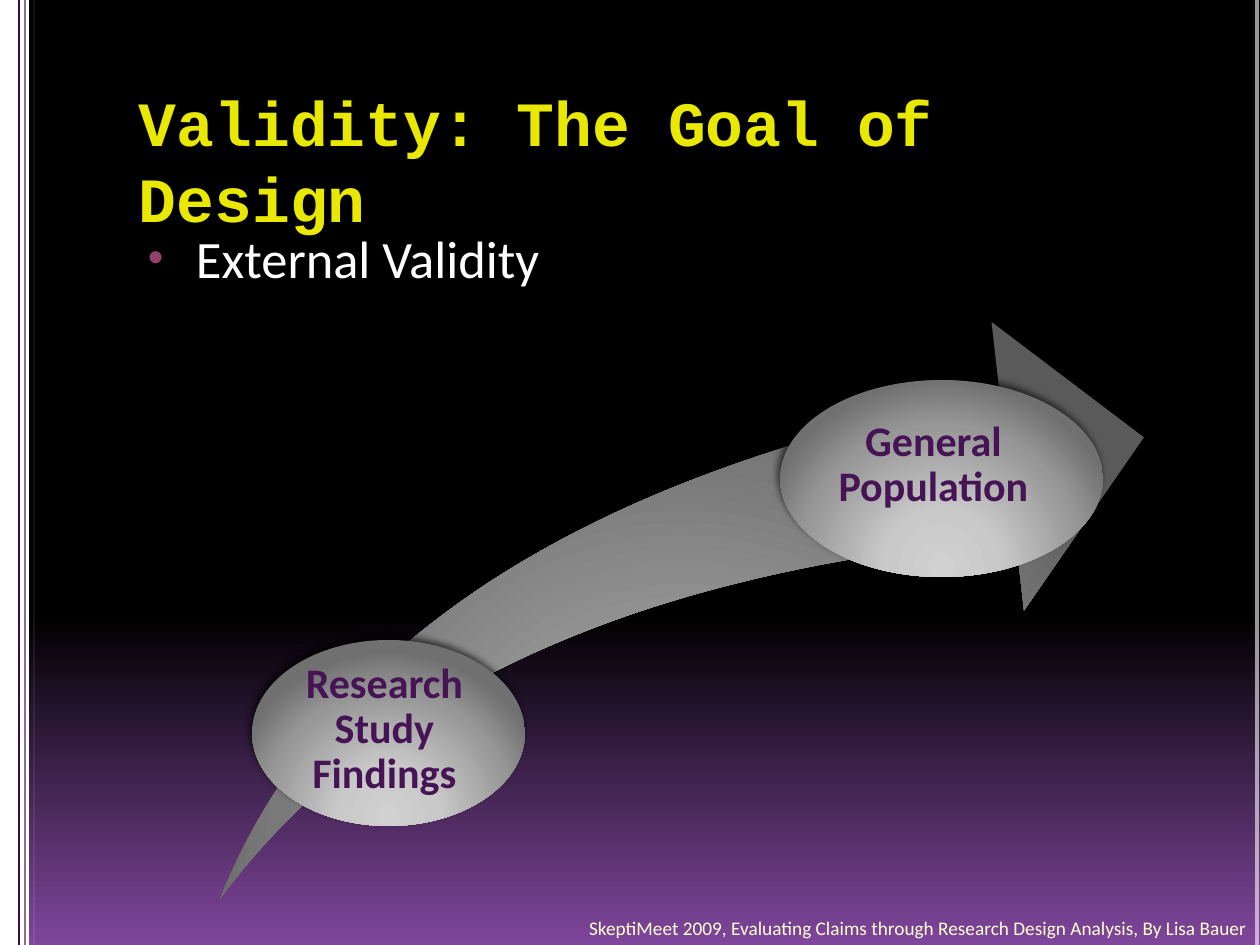
from lxml import etree
from pptx import Presentation
from pptx.dml.color import RGBColor
from pptx.enum.shapes import MSO_CONNECTOR, MSO_SHAPE
from pptx.enum.text import MSO_ANCHOR, PP_ALIGN
from pptx.oxml import parse_xml
from pptx.oxml.ns import nsdecls, qn
from pptx.util import Pt

PX = 914400 // 126
WIDTH, HEIGHT = 1260, 945
LEFT, CENTER, RIGHT = PP_ALIGN.LEFT, PP_ALIGN.CENTER, PP_ALIGN.RIGHT
TOP, BOTTOM = MSO_ANCHOR.TOP, MSO_ANCHOR.BOTTOM

COLORS = {
    "white": "FFFFFF", "plum": "340F40", "title": "E8E800",
    "label": "461455", "bullet": "92406E", "footer": "FFFFD2",
}
BACKDROP = [(0, "000000"), (65, "000000"), (100, "7F469C")]
ARROW_GRAYS = [(0, "A7A7A7"), (30, "A1A1A1"), (75, "797979"), (100, "5A5A5A")]
OVAL_GRAYS = [(0, "D1D1D1"), (30, "C9C9C9"), (75, "979797"), (100, "707070")]
LINEAR_DOWN = '<a:lin ang="5400000" scaled="0"/>'
GLOW_FROM_BELOW = ('<a:path path="circle"><a:fillToRect l="50000" t="100000" '
                   'r="50000" b="10000"/></a:path>')

# x, color, width in points, opacity in percent
STRIPES = [(19, "plum", 1, 100), (25, "plum", 1, 59),
           (34, "white", 0.25, 59), (1257, "white", 2.25, 59)]
SIDEBAR = (0, 0, 29, HEIGHT)
ARROW = (220, 322, 924, 577)

TITLE = ("Validity: The Goal of Design", (126, 70, 1071, 126))
POINT = ("External Validity", (126, 217, 1071, 659))
FOOTER = ("SkeptiMeet 2009, Evaluating Claims through Research Design Analysis, "
          "By Lisa Bauer", (494, 895, 766, 50))
# label, oval box, label box, left inset
STAGES = [
    ("Research Study Findings", (252, 640, 273, 186), (242, 662, 267, 127), 18),
    ("General Population", (780, 380, 323, 197), (766, 420, 306, 113), 29),
]


def emu(box):
    return [value * PX for value in box]


def rgb(name):
    return RGBColor.from_string(COLORS[name])


def set_gradient(fill, properties, stops, direction):
    """Put a gradient where the solid fill of the properties element stands."""
    fill.solid()
    stop_xml = "".join(
        f'<a:gs pos="{position * 1000}"><a:srgbClr val="{color}"/></a:gs>'
        for position, color in stops)
    gradient = parse_xml(f'<a:gradFill {nsdecls("a")} rotWithShape="1">'
                         f'<a:gsLst>{stop_xml}</a:gsLst>{direction}</a:gradFill>')
    properties.replace(properties.find(qn("a:solidFill")), gradient)


def add_plain_shape(slide, preset, box):
    shape = slide.shapes.add_shape(preset, *emu(box))
    shape.shadow.inherit = False
    shape.line.fill.background()
    return shape


def add_stripe(slide, x, color, width, opacity):
    stripe = slide.shapes.add_connector(
        MSO_CONNECTOR.STRAIGHT, *emu((x, 0, x, HEIGHT)))
    stripe.line.width = Pt(width)
    stripe.line.color.rgb = rgb(color)
    properties = stripe._element.spPr
    tint = next(properties.iter(qn("a:srgbClr")))
    etree.SubElement(tint, qn("a:alpha")).set("val", str(opacity * 1000))
    etree.SubElement(properties, qn("a:effectLst"))


def add_text(slide, text, box, size, color, font="Calibri", bold=False,
             align=LEFT, anchor=TOP, insets=(13, 6, 13, 6), spacing=None):
    frame = slide.shapes.add_textbox(*emu(box)).text_frame
    left, top, right, bottom = emu(insets)
    frame_format = {"word_wrap": True, "vertical_anchor": anchor,
                    "margin_left": left, "margin_top": top,
                    "margin_right": right, "margin_bottom": bottom}
    for name, value in frame_format.items():
        setattr(frame, name, value)
    paragraph = frame.paragraphs[0]
    paragraph.alignment = align
    paragraph.line_spacing = spacing
    run = paragraph.add_run()
    run.text = text
    for name, value in {"name": font, "size": Pt(size), "bold": bold}.items():
        setattr(run.font, name, value)
    run.font.color.rgb = rgb(color)
    return paragraph


def add_bullet(paragraph):
    properties = paragraph._p.get_or_add_pPr()
    properties.set("marL", str(57 * PX))
    properties.set("indent", str(-48 * PX))
    for markup in (f'<a:buClr {nsdecls("a")}><a:srgbClr val="{COLORS["bullet"]}"/></a:buClr>',
                   f'<a:buSzPct {nsdecls("a")} val="85000"/>',
                   f'<a:buFont {nsdecls("a")} typeface="Arial"/>',
                   f'<a:buChar {nsdecls("a")} char="•"/>'):
        properties.append(parse_xml(markup))


def add_oval(slide, box):
    oval = add_plain_shape(slide, MSO_SHAPE.OVAL, box)
    properties = oval._element.spPr
    set_gradient(oval.fill, properties, OVAL_GRAYS, GLOW_FROM_BELOW)
    properties.find(qn("a:effectLst")).append(parse_xml(
        f'<a:outerShdw {nsdecls("a")} blurRad="{Pt(4)}" dist="{Pt(3)}" '
        f'dir="{245 * 60000}" rotWithShape="0"><a:srgbClr val="000000">'
        '<a:alpha val="60000"/></a:srgbClr></a:outerShdw>'))


def main():
    deck = Presentation()
    deck.slide_width, deck.slide_height = emu((WIDTH, HEIGHT))
    slide = deck.slides.add_slide(deck.slide_layouts[6])

    backdrop = slide.background.fill
    backdrop.solid()
    set_gradient(backdrop, next(slide._element.iter(qn("p:bgPr"))),
                 BACKDROP, LINEAR_DOWN)

    sidebar = add_plain_shape(slide, MSO_SHAPE.RECTANGLE, SIDEBAR)
    sidebar.fill.solid()
    sidebar.fill.fore_color.rgb = rgb("white")
    for stripe in STRIPES:
        add_stripe(slide, *stripe)

    add_text(slide, *TITLE, 36, "title", font="Courier New", bold=True,
             insets=(13, 13, 13, 6), spacing=Pt(43.4))
    add_bullet(add_text(slide, *POINT, 30, "white", insets=(13, 9, 13, 6)))

    arrow = add_plain_shape(slide, MSO_SHAPE.SWOOSH_ARROW, ARROW)
    arrow.adjustments[0] = arrow.adjustments[1] = 0.25
    set_gradient(arrow.fill, arrow._element.spPr, ARROW_GRAYS, GLOW_FROM_BELOW)
    for label, oval_box, label_box, inset in STAGES:
        add_oval(slide, oval_box)
        add_text(slide, label, label_box, 24, "label", bold=True, align=CENTER,
                 insets=(inset, 0, 0, 0), spacing=0.9)

    add_text(slide, *FOOTER, 11, "footer", align=RIGHT, anchor=BOTTOM)
    deck.save("out.pptx")


if __name__ == "__main__":
    main()
